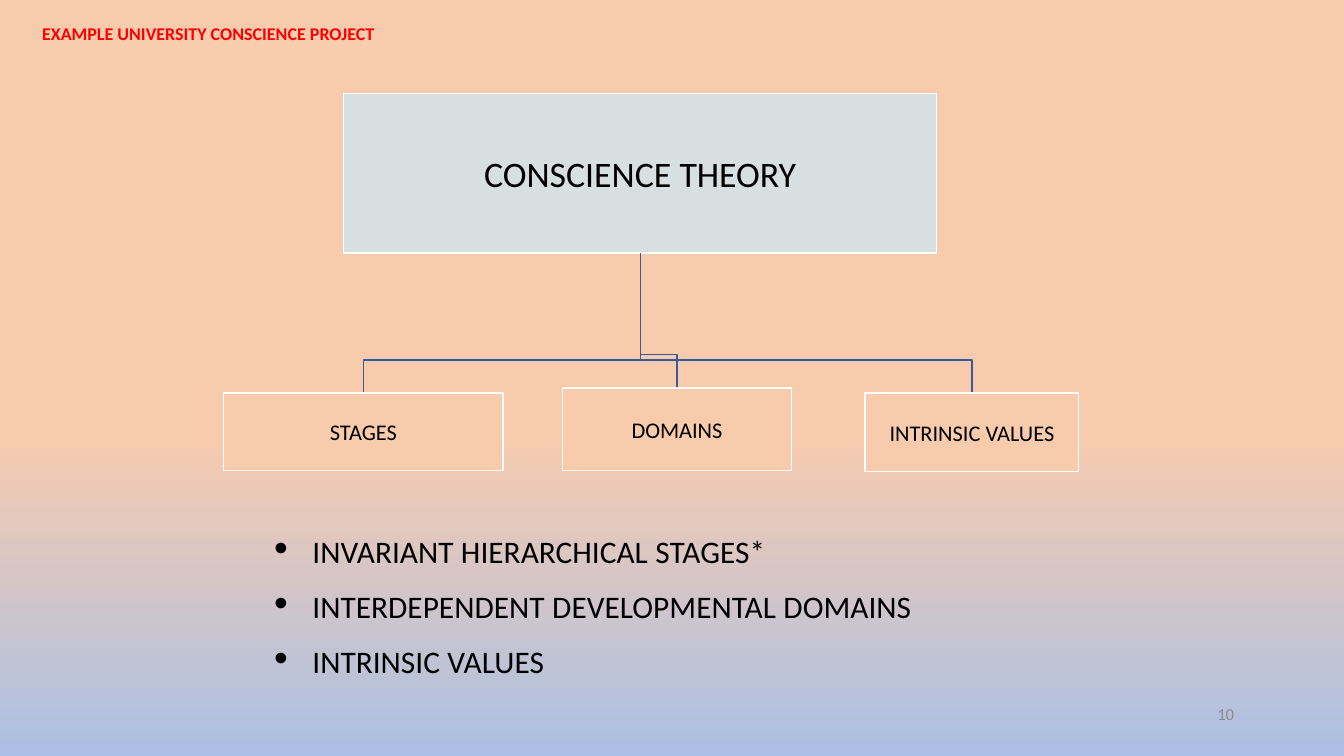
import dataclasses
from typing import Any

import pptx
import pptx.dml.color
import pptx.enum.shapes
import pptx.enum.text
import pptx.oxml
import pptx.oxml.ns
import pptx.util

Inches = pptx.util.Inches
Pt = pptx.util.Pt
Align = pptx.enum.text.PP_ALIGN
Anchor = pptx.enum.text.MSO_ANCHOR
AutoSize = pptx.enum.text.MSO_AUTO_SIZE

PEACH = "F8CBAD"
BLACK = "000000"
BEND_RISE = 0.33


@dataclasses.dataclass(frozen=True)
class Node:
    text: str
    left: float
    top: float
    width: float
    height: float
    size: int = 20
    fill: str = PEACH
    inset: float = 0.01

    @property
    def center(self) -> float:
        return self.left + self.width / 2

    @property
    def bottom(self) -> float:
        return self.top + self.height

    @property
    def box(self) -> tuple[int, ...]:
        return tuple(Inches(n) for n in (self.left, self.top, self.width, self.height))


THEORY = Node("conscience theory", 3.41, 0.93, 5.88, 1.58, 32, "D7DFE1", 0.02)
BRANCHES = [
    Node("intrinsic values", 8.58, 3.9, 2.12, 0.78),
    Node("domains", 5.58, 3.85, 2.27, 0.82),
    Node("stages", 2.22, 3.9, 2.77, 0.77),
]
PRINCIPLES = [
    "invariant hierarchical stages*",
    "interdependent developmental domains",
    "intrinsic values",
]


def rgb(value: str) -> pptx.dml.color.RGBColor:
    return pptx.dml.color.RGBColor.from_string(value)


def apply(target: Any, formats: dict[str, Any]) -> None:
    for attribute, value in formats.items():
        setattr(target, attribute, value)


def write(paragraph: Any, text: str, size: int, color: str,
          bold: bool = False, small_caps: bool = True) -> None:
    run = paragraph.add_run()
    run.text = text
    apply(run.font, {"name": "Calibri", "size": Pt(size), "bold": bold})
    run.font.color.rgb = rgb(color)
    if small_caps:
        run._r.get_or_add_rPr().set("cap", "small")


def outline(shape: Any, color: str) -> None:
    shape.line.color.rgb = rgb(color)
    shape.line.width = Pt(1)


def fill_node(shape: Any, node: Node) -> None:
    shape.fill.solid()
    shape.fill.fore_color.rgb = rgb(node.fill)
    outline(shape, "FFFFFF")
    shape.shadow.inherit = False
    margins = dict.fromkeys(
        ("margin_left", "margin_top", "margin_right", "margin_bottom"), Inches(node.inset))
    apply(shape.text_frame, {
        "word_wrap": True, "auto_size": AutoSize.NONE,
        "vertical_anchor": Anchor.MIDDLE, **margins})
    paragraph = shape.text_frame.paragraphs[0]
    apply(paragraph, {"alignment": Align.CENTER, "line_spacing": 0.9})
    write(paragraph, node.text, node.size, BLACK)


def draw_branch(slide: Any, parent: Node, child: Node) -> None:
    bend = child.top - BEND_RISE
    points = [(parent.center, parent.bottom), (parent.center, bend),
              (child.center, bend), (child.center, child.top)]
    start, *rest = [(Inches(x), Inches(y)) for x, y in points]
    builder = slide.shapes.build_freeform(*start)
    builder.add_line_segments(rest, close=False)
    elbow = builder.convert_to_shape()
    elbow.fill.background()
    elbow.shadow.inherit = False
    outline(elbow, "365B9D")


def add_text_frame(slide: Any, left: float, top: float, width: float, height: float,
                   formats: dict[str, Any]) -> Any:
    frame = slide.shapes.add_textbox(
        Inches(left), Inches(top), Inches(width), Inches(height)).text_frame
    apply(frame, {"word_wrap": True, **formats})
    return frame


def add_principles(slide: Any) -> None:
    frame = add_text_frame(slide, 2.62, 4.54, 7.25, 2.75, {"margin_top": Inches(0.66)})
    for index, principle in enumerate(PRINCIPLES):
        paragraph = frame.add_paragraph() if index else frame.paragraphs[0]
        paragraph.space_before = Pt(5.6 if index else 0)
        properties = paragraph._p.get_or_add_pPr()
        properties.set("marL", str(Inches(0.38)))
        properties.set("indent", str(-Inches(0.38)))
        for markup in ('<a:buFont {} typeface="Arial"/>', '<a:buChar {} char="•"/>'):
            properties.append(pptx.oxml.parse_xml(
                markup.format(pptx.oxml.ns.nsdecls("a"))))
        write(paragraph, principle, 28, BLACK)


def paint_background(slide: Any) -> None:
    fill = slide.background.fill
    fill.gradient()
    fill.gradient_angle = 270
    for stop, (position, color) in zip(
            fill.gradient_stops, [(0.57, PEACH), (1.0, "ABC0E4")]):
        stop.position = position
        stop.color.rgb = rgb(color)


def main() -> None:
    presentation = pptx.Presentation()
    apply(presentation, {"slide_width": Inches(13.33), "slide_height": Inches(7.5)})
    slide = presentation.slides.add_slide(presentation.slide_layouts[5])
    paint_background(slide)

    page_number = add_text_frame(
        slide, 9.56, 6.83, 2.78, 0.5, {"vertical_anchor": Anchor.MIDDLE}).paragraphs[0]
    page_number.alignment = Align.RIGHT
    write(page_number, "10", 12, "8C8C8C", small_caps=False)

    add_principles(slide)
    for branch in BRANCHES:
        draw_branch(slide, THEORY, branch)

    theory = slide.shapes.title
    apply(theory, dict(zip(("left", "top", "width", "height"), THEORY.box)))
    fill_node(theory, THEORY)
    for branch in BRANCHES:
        rectangle = slide.shapes.add_shape(
            pptx.enum.shapes.MSO_SHAPE.RECTANGLE, *branch.box)
        fill_node(rectangle, branch)

    project = add_text_frame(
        slide, 0.32, 0.13, 4.4, 0.37, {"auto_size": AutoSize.SHAPE_TO_FIT_TEXT})
    write(project.paragraphs[0], "example university conscience project",
          16, "FF0000", bold=True)

    presentation.save("out.pptx")


if __name__ == "__main__":
    main()
